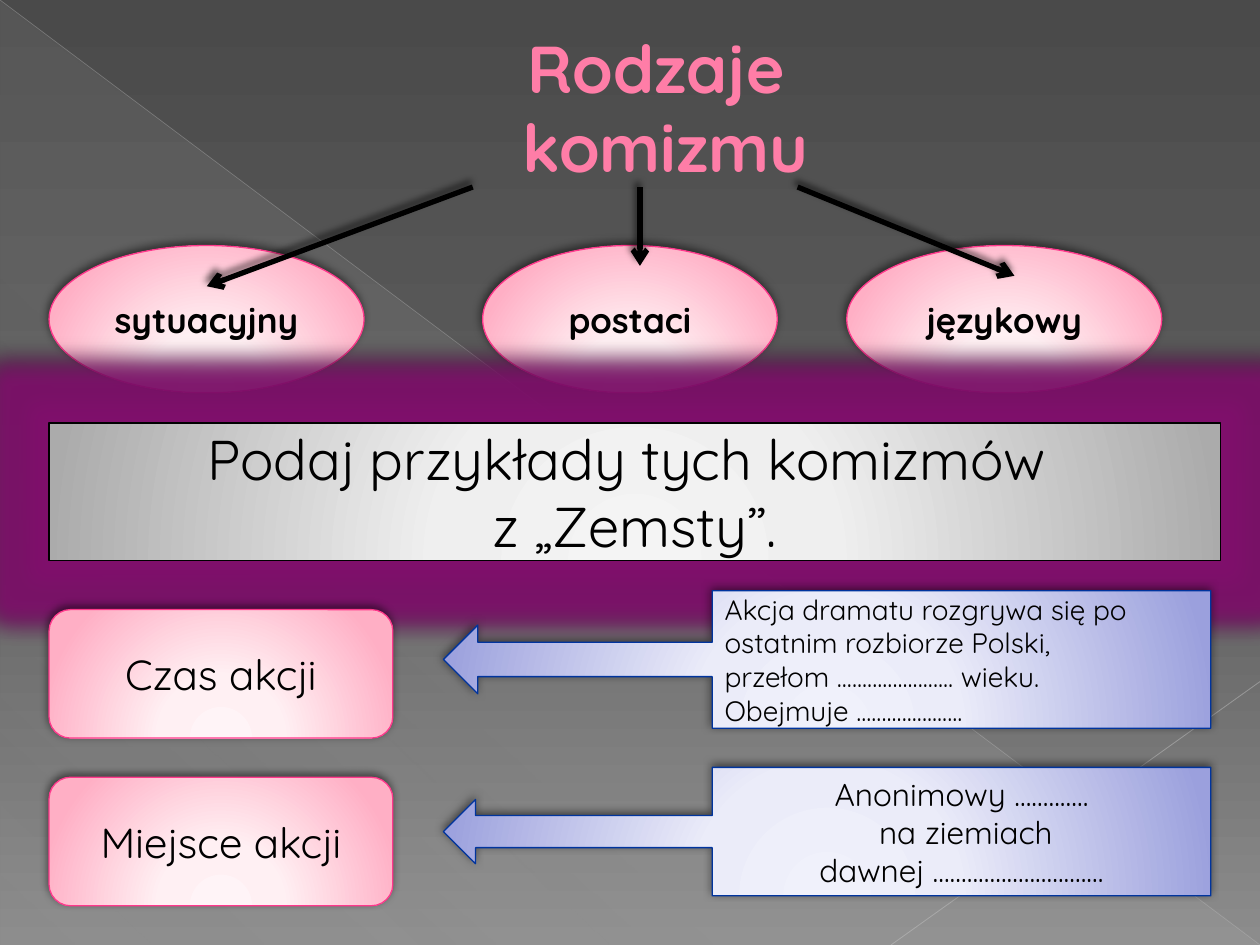
import pptx
import pptx.dml.color
import pptx.enum.shapes
import pptx.enum.text
import pptx.oxml
import pptx.oxml.ns
import pptx.util
from dataclasses import dataclass

Cm = pptx.util.Cm
Pt = pptx.util.Pt
qn = pptx.oxml.ns.qn
SHAPE = pptx.enum.shapes.MSO_SHAPE
ALIGN = pptx.enum.text.PP_ALIGN
MIDDLE = pptx.enum.text.MSO_ANCHOR.MIDDLE
NS = 'xmlns:a="http://schemas.openxmlformats.org/drawingml/2006/main"'


@dataclass(frozen=True)
class Theme:
    font: str = "Quicksand"
    text: str = "000000"
    title: str = "FF7DA7"
    glow: str = "800F6C"
    # gradient stops: position, colour, opacity in percent
    background: tuple = ((0, "4A4A4A", 100), (60, "626262", 100), (100, "8C8C8C", 100))
    veil: tuple = ((0, "D2D2D2", 10), (70, "D2D2D2", 8), (100, "D2D2D2", 1))
    # fill stops and line colour of each kind of box
    pink: tuple = (((0, "FFF4F7", 100), (34, "FFF0F3", 100), (100, "FFAFC5", 100)), "FF388C")
    grey: tuple = (((0, "F4F4F4", 100), (34, "EFEFEF", 100), (100, "ABABAB", 100)), "000000")
    blue: tuple = (((0, "F0F1FB", 100), (34, "EBECF9", 100), (100, "9BA0DD", 100)), "00349E")
    title_size: float = 37.8
    banner_size: int = 32
    topic_size: int = 24
    kind_size: int = 20
    time_size: int = 16
    place_size: int = 18


T = Theme()


def rgb(value):
    return pptx.dml.color.RGBColor.from_string(value)


def color_xml(value, alpha):
    return f'<a:srgbClr val="{value}"><a:alpha val="{alpha * 1000}"/></a:srgbClr>'


def set_gradient(fill, parent, stops, angle=None):
    """Linear gradient at an angle, or a round one lit from below if none is given."""
    fill.gradient()
    gs = "".join(f'<a:gs pos="{pos * 1000}">{color_xml(c, alpha)}</a:gs>'
                 for pos, c, alpha in stops)
    if angle is None:
        course = ('<a:path path="circle"><a:fillToRect l="50000" t="155000" '
                  'r="50000" b="-55000"/></a:path>')
    else:
        course = f'<a:lin ang="{angle * 60000}" scaled="0"/>'
    parent.replace(parent.find(qn("a:gradFill")), pptx.oxml.parse_xml(
        f'<a:gradFill {NS} rotWithShape="1"><a:gsLst>{gs}</a:gsLst>{course}</a:gradFill>'))


def shadow_xml(alpha, blur, dist):
    return (f'<a:outerShdw blurRad="{Pt(blur)}" dist="{Pt(dist)}" dir="{245 * 60000}" '
            f'algn="tl" rotWithShape="0">{color_xml("000000", alpha)}</a:outerShdw>')


def set_effects(sp, effects=""):
    """Call after fill and line are set, as effects follow them."""
    sp.element.spPr.append(pptx.oxml.parse_xml(f'<a:effectLst {NS}>{effects}</a:effectLst>'))


def write(tf, paragraphs, size, color, bold=False, align=ALIGN.CENTER):
    tf.word_wrap = True
    tf.vertical_anchor = MIDDLE
    for i, text in enumerate(paragraphs):
        p = tf.add_paragraph() if i else tf.paragraphs[0]
        p.text = text
        p.alignment = align
        p.font.name, p.font.size, p.font.bold = T.font, Pt(size), bold
        p.font.color.rgb = rgb(color)


def add_box(s, shape, box, look, paragraphs, size, bold=False, align=ALIGN.CENTER, glow=""):
    sp = s.shapes.add_shape(shape, *map(Cm, box))
    stops, line = look
    set_gradient(sp.fill, sp.element.spPr, stops)
    sp.line.color.rgb = rgb(line)
    sp.line.width = Pt(0.75)
    set_effects(sp, glow + shadow_xml(50, 5, 2))
    write(sp.text_frame, paragraphs, size, T.text, bold, align)


def add_line(s, start, end, color, width, alpha=100, arrow=False):
    line = s.shapes.add_connector(pptx.enum.shapes.MSO_CONNECTOR.STRAIGHT,
                                  *map(Cm, start + end))
    line.line.color.rgb = rgb(color)
    line.line.width = Pt(width)
    ln = line.line._get_or_add_ln()
    fill = ln.find(qn("a:solidFill"))
    fill.replace(fill[0], pptx.oxml.parse_xml(
        color_xml(color, alpha).replace("<a:srgbClr", f"<a:srgbClr {NS}", 1)))
    if arrow:
        ln.append(pptx.oxml.parse_xml(f'<a:tailEnd {NS} type="arrow"/>'))
    set_effects(line, shadow_xml(60, 4, 3) if arrow else "")


def add_backdrop(s, width, height):
    fill = s.background.fill
    fill.solid()
    set_gradient(fill, s.element.find(".//" + qn("p:bgPr")), T.background, 90)
    sp = s.shapes.add_shape(SHAPE.RIGHT_TRIANGLE, 0, 0, Cm(width), Cm(height))
    set_gradient(sp.fill, sp.element.spPr, T.veil, 133)
    sp.line.fill.background()
    set_effects(sp)
    add_line(s, (0, 0), (width, height), "BFBFBF", 0.39, 35)
    add_line(s, (width, 13.74), (17.96, height), "C6C6C6", 0.47, 45)


def add_title(s, box, text):
    title = s.shapes.title
    title.left, title.top, title.width, title.height = map(Cm, box)
    s.shapes._spTree.append(title.element)  # in front of the backdrop
    write(title.text_frame, [text], T.title_size, T.title, bold=True)
    title.text_frame.auto_size = pptx.enum.text.MSO_AUTO_SIZE.NONE
    title.text_frame.paragraphs[0]._p.get_or_add_pPr().set("marL", str(Cm(1.35)))


def add_kinds(s, box):
    """Three ellipses, with arrows coming down to them from the title."""
    x, y, w, h = box
    kinds = [("sytuacyjny", 0, 6.35), ("postaci", 8.74, 5.94), ("językowy", w - 6.35, 6.35)]
    for text, dx, width in kinds:
        add_box(s, SHAPE.OVAL, (x + dx, y, width, h), T.pink, [text], T.kind_size, bold=True)
    for from_x, to_x, to_y in [(8.54, 3.18, 0.82), (11.91, 11.91, 0.41), (15.09, 19.46, 0.61)]:
        add_line(s, (x + from_x, y - 1.18), (x + to_x, y + to_y), T.text, 3, arrow=True)


def add_task(s, box, text):
    glow = f'<a:glow rad="{Pt(24)}">{color_xml(T.glow, 90)}</a:glow>'
    add_box(s, SHAPE.RECTANGLE, box, T.grey, [text], T.banner_size, glow=glow)


def add_topic(s, box, name, note, size, align, note_top, note_height):
    """A named box on the left and a callout pointing to it."""
    x, y, w, h = box
    add_box(s, SHAPE.ROUNDED_RECTANGLE, (x, y, 6.93, h), T.pink, [name], T.topic_size)
    add_box(s, SHAPE.LEFT_ARROW_CALLOUT, (x + w - 15.47, y + note_top, 15.47, note_height),
            T.blue, note, size, align=align)


def main():
    prs = pptx.Presentation()
    width, height = 25.4, 19.05
    prs.slide_width, prs.slide_height = Cm(width), Cm(height)
    s = prs.slides.add_slide(prs.slide_layouts[5])
    left = 0.99
    add_backdrop(s, width, height)
    add_title(s, (1.27, 0.74, 22.94, 2.82), "Rodzaje \nkomizmu")
    add_kinds(s, (left, 4.95, 22.43, 2.97))
    add_task(s, (left, 8.53, 23.62, 2.77), "Podaj przykłady tych komizmów \nz „Zemsty”.")
    add_topic(s, (left, 12.29, 23.42, 2.59), "Czas akcji",
              ["Akcja dramatu rozgrywa się po ostatnim rozbiorze Polski, "
               "przełom ....................... wieku.",
               "Obejmuje ....................."],
              T.time_size, ALIGN.LEFT, -0.38, 2.77)
    add_topic(s, (left, 15.67, 23.42, 2.59), "Miejsce akcji",
              ["Anonimowy .............\n na ziemiach dawnej .............................."],
              T.place_size, ALIGN.CENTER, -0.2, 2.59)
    prs.save("out.pptx")


if __name__ == "__main__":
    main()
